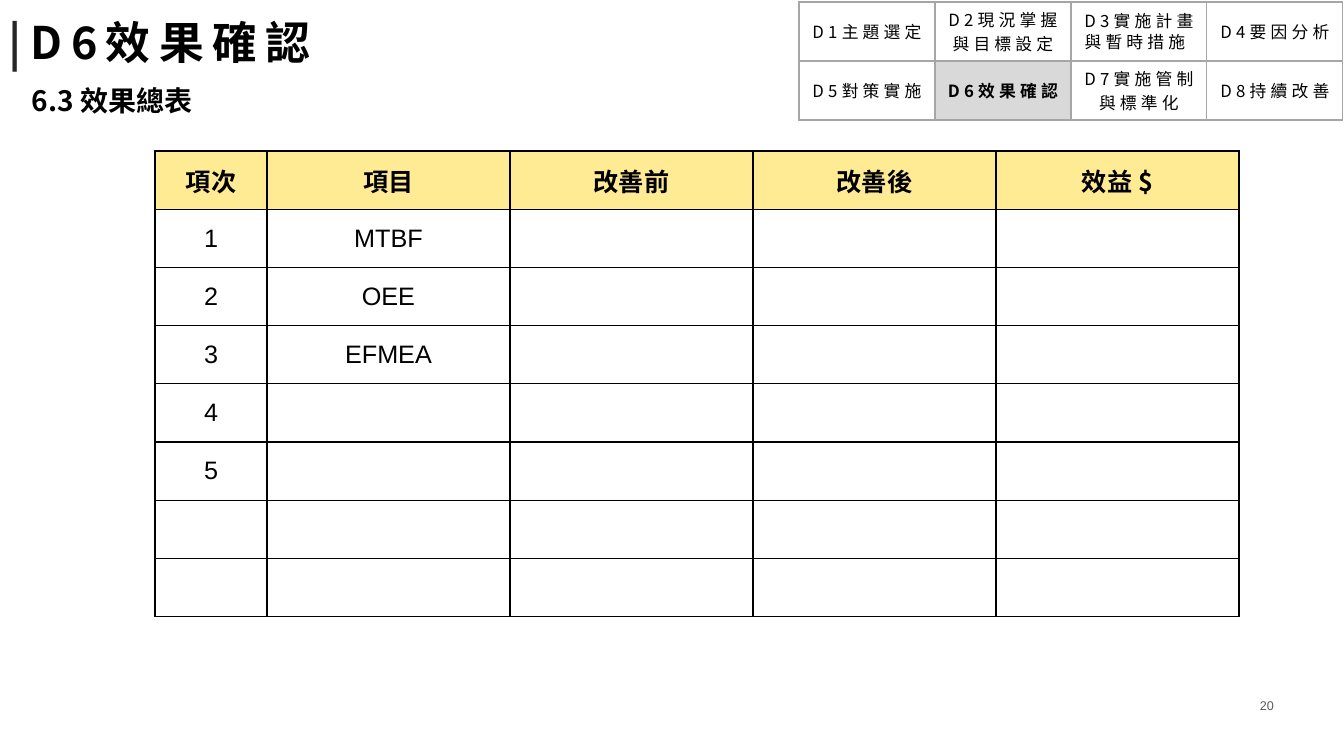
from dataclasses import dataclass

import pptx
import pptx.dml.color
import pptx.enum.text
import pptx.oxml
import pptx.oxml.ns
import pptx.oxml.xmlchemy
import pptx.slide
import pptx.table
import pptx.text.text
import pptx.util

PX_PER_INCH = 100.8
ALIGN = pptx.enum.text.PP_ALIGN
MIDDLE = pptx.enum.text.MSO_ANCHOR.MIDDLE


@dataclass(frozen=True)
class Theme:
    heading_font: str = "Noto Sans CJK SC"
    body_font: str = "Arial"
    ink: str = "000000"
    bar: str = "262626"
    number: str = "595959"
    paper: str = "FFFFFF"
    current: str = "D9D9D9"
    header: str = "FFEB94"
    step_border: str = "A6A6A6"
    title_size: int = 32
    subtitle_size: int = 20
    table_size: int = 18
    step_size: int = 12
    number_size: int = 9


THEME = Theme()


@dataclass(frozen=True)
class Style:
    size: int
    font: str = THEME.heading_font
    color: str = THEME.ink
    bold: bool = False
    spacing: int = 0


@dataclass(frozen=True)
class Box:
    left: int
    top: int
    width: int
    height: int
    inset_x: int
    inset_y: int


@dataclass(frozen=True)
class Cell:
    lines: tuple[str, ...]
    style: Style
    fill: str = THEME.paper
    line_spacing: float = 1.0


@dataclass(frozen=True)
class Grid:
    left: int
    top: int
    height: int
    columns: tuple[int, ...]
    border: str
    inset_x: int
    inset_y: int
    rows: list[list[Cell]]


TITLE = Style(THEME.title_size, bold=True, spacing=6)
TITLE_BAR = Style(THEME.title_size, color=THEME.bar, bold=True, spacing=6)
SUBTITLE = Style(THEME.subtitle_size, bold=True)
NUMBER = Style(THEME.number_size, THEME.body_font, THEME.number)
STEP = Style(THEME.step_size, spacing=3)
CURRENT_STEP = Style(THEME.step_size, bold=True, spacing=3)
HEADER = Style(THEME.table_size, bold=True)
BODY = Style(THEME.table_size, THEME.body_font)

STEP_ROWS = [
    [
        Cell(("D1主題選定",), STEP),
        Cell(("D2現況掌握", "與目標設定"), STEP),
        Cell(("D3實施計畫", "與暫時措施 "), STEP, line_spacing=0.85),
        Cell(("D4要因分析",), STEP),
    ],
    [
        Cell(("D5對策實施",), STEP),
        Cell(("D6效果確認",), CURRENT_STEP, THEME.current),
        Cell(("D7實施管制", "與標準化"), STEP),
        Cell(("D8持續改善",), STEP),
    ],
]
HEADINGS = ("項次", "項目", "改善前", "改善後", "效益 $")
ITEMS = (("1", "MTBF"), ("2", "OEE"), ("3", "EFMEA"), ("4", ""), ("5", ""), ("", ""), ("", ""))


def px(length: int) -> pptx.util.Emu:
    return pptx.util.Emu(round(length * 914400 / PX_PER_INCH))


def rgb(color: str) -> pptx.dml.color.RGBColor:
    return pptx.dml.color.RGBColor.from_string(color)


def add_span(para: pptx.text.text._Paragraph, text: str, style: Style) -> None:
    span = para.add_run()
    span.text = text
    span.font.size = pptx.util.Pt(style.size)
    span.font.name = style.font
    span.font.bold = style.bold
    span.font.color.rgb = rgb(style.color)
    properties = span._r.get_or_add_rPr()
    east_asian = pptx.oxml.xmlchemy.OxmlElement("a:ea")
    east_asian.set("typeface", style.font)
    properties.append(east_asian)
    if style.spacing:
        properties.set("spc", str(style.spacing * 100))


def add_text(
    page: pptx.slide.Slide,
    box: Box,
    spans: list[tuple[str, Style]],
    align: ALIGN = ALIGN.LEFT,
) -> None:
    frame = page.shapes.add_textbox(
        px(box.left), px(box.top), px(box.width), px(box.height)
    ).text_frame
    frame.word_wrap = True
    frame.vertical_anchor = MIDDLE
    frame.margin_left = frame.margin_right = px(box.inset_x)
    frame.margin_top = frame.margin_bottom = px(box.inset_y)
    para = frame.paragraphs[0]
    para.alignment = align
    for text, style in spans:
        add_span(para, text, style)


def add_borders(cell: pptx.table._Cell, color: str) -> None:
    properties = cell._tc.get_or_add_tcPr()
    for side in ("lnL", "lnR", "lnT", "lnB"):
        properties.append(pptx.oxml.parse_xml(
            f'<a:{side} {pptx.oxml.ns.nsdecls("a")} w="12700"><a:solidFill>'
            f'<a:srgbClr val="{color}"/></a:solidFill></a:{side}>'
        ))


def fill_cell(target: pptx.table._Cell, cell: Cell, grid: Grid) -> None:
    add_borders(target, grid.border)
    target.fill.solid()
    target.fill.fore_color.rgb = rgb(cell.fill)
    target.vertical_anchor = MIDDLE
    target.margin_left = target.margin_right = px(grid.inset_x)
    target.margin_top = target.margin_bottom = px(grid.inset_y)
    frame = target.text_frame
    for index, line in enumerate(cell.lines):
        para = frame.add_paragraph() if index else frame.paragraphs[0]
        para.alignment = ALIGN.CENTER
        para.line_spacing = cell.line_spacing
        if line:
            add_span(para, line, cell.style)


def add_grid(page: pptx.slide.Slide, grid: Grid) -> None:
    table = page.shapes.add_table(
        len(grid.rows), len(grid.columns), px(grid.left), px(grid.top),
        px(sum(grid.columns)), px(grid.height),
    ).table
    table.first_row = table.horz_banding = False
    for column, width in zip(table.columns, grid.columns):
        column.width = px(width)
    for r, cells in enumerate(grid.rows):
        for c, cell in enumerate(cells):
            fill_cell(table.cell(r, c), cell, grid)


def main() -> None:
    deck = pptx.Presentation()
    deck.slide_width, deck.slide_height = px(1344), px(756)
    page = deck.slides.add_slide(deck.slide_layouts[6])

    add_text(page, Box(1212, 690, 72, 31, 10, 5), [("20", NUMBER)], ALIGN.RIGHT)
    add_text(page, Box(2, 4, 797, 76, 7, 4), [("|", TITLE_BAR), ("D6效果確認", TITLE)])
    add_grid(page, Grid(799, 2, 118, (136,) * 4, THEME.step_border, 5, 3, STEP_ROWS))

    header = [Cell((heading,), HEADER, THEME.header) for heading in HEADINGS]
    body = [[Cell((text,), BODY) for text in (*item, "", "", "")] for item in ITEMS]
    add_grid(page, Grid(155, 151, 466, (112,) + (243,) * 4, THEME.ink, 10, 5, [header, *body]))
    add_text(page, Box(22, 78, 430, 44, 10, 5), [("6.3 效果總表", SUBTITLE)])

    deck.save("out.pptx")


if __name__ == "__main__":
    main()
